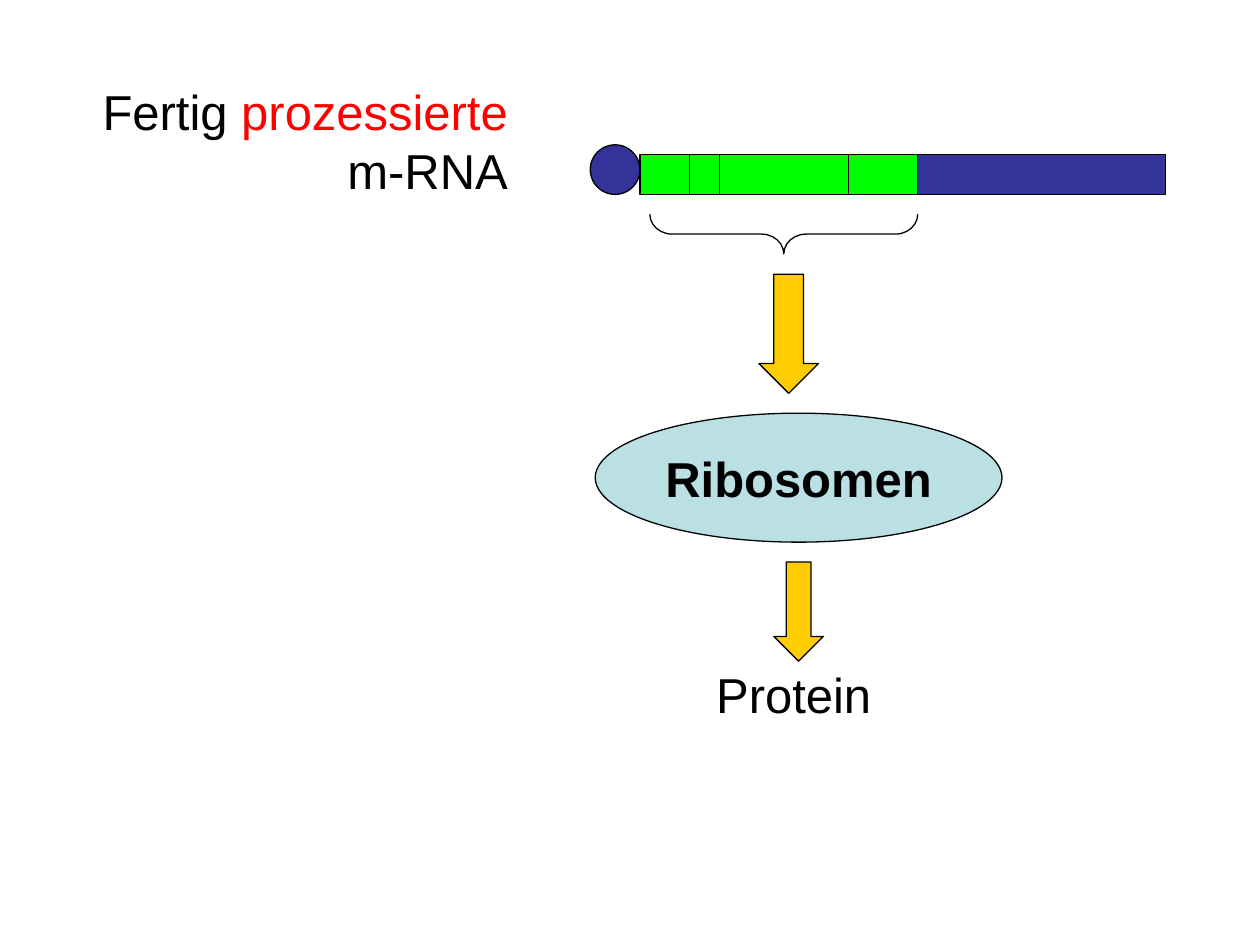
"""Build a slide showing how processed m-RNA becomes protein at the ribosomes."""
from dataclasses import dataclass

from pptx import Presentation
from pptx.dml.color import RGBColor
from pptx.enum.shapes import MSO_SHAPE
from pptx.enum.text import MSO_ANCHOR, MSO_AUTO_SIZE, PP_ALIGN
from pptx.util import Cm, Pt

RECTANGLE, OVAL = MSO_SHAPE.RECTANGLE, MSO_SHAPE.OVAL
BRACE, ARROW = MSO_SHAPE.RIGHT_BRACE, MSO_SHAPE.DOWN_ARROW
TOP, MIDDLE = MSO_ANCHOR.TOP, MSO_ANCHOR.MIDDLE
RIGHT, CENTER = PP_ALIGN.RIGHT, PP_ALIGN.CENTER
FIXED = MSO_AUTO_SIZE.NONE
TITLE_ONLY = 5


@dataclass(frozen=True)
class Theme:
    font: str = "Arial"
    size: int = 28
    outline: float = 0.75
    ink: str = "000000"
    accent: str = "FF0000"
    coding: str = "00FF00"
    noncoding: str = "333399"
    arrow: str = "FFCC00"
    ribosome: str = "BBE0E3"


THEME = Theme()
HEADING = [("Fertig ", THEME.ink), ("prozessierte", THEME.accent), (" m-RNA", THEME.ink)]
RIBOSOME = [("Ribosomen", THEME.ink)]
PRODUCT = [("Protein", THEME.ink)]
SEGMENTS = [
    (1.0, THEME.coding),
    (0.6, THEME.coding),
    (2.6, THEME.coding),
    (1.4, THEME.coding),
    (5.0, THEME.noncoding),
]
STRAND_LEFT, STRAND_TOP, STRAND_HEIGHT, CAP = 12.9, 3.12, 0.8, 1.0
BRACE_LEFT, BRACE_TOP, BRACE_SPAN, BRACE_DEPTH = 13.1, 4.32, 5.4, 0.8
ARROWS = [(15.3, 5.53, 1.2, 2.4), (15.6, 11.33, 1.0, 2.0)]


def write(box, spans, align=CENTER, anchor=TOP, bold=False, wrap=True):
    frame = box.text_frame
    frame.auto_size = FIXED
    frame.word_wrap = wrap
    frame.vertical_anchor = anchor
    para = frame.paragraphs[0]
    para.alignment = align
    for text, color in spans:
        span = para.add_run()
        span.text = text
        span.font.name = THEME.font
        span.font.size = Pt(THEME.size)
        span.font.bold = bold
        span.font.color.rgb = RGBColor.from_string(color)


def draw(page, kind, place, fill=None):
    shape = page.shapes.add_shape(kind, *map(Cm, place))
    shape.shadow.inherit = False
    if fill:
        shape.fill.solid()
        shape.fill.fore_color.rgb = RGBColor.from_string(fill)
    else:
        shape.fill.background()
    shape.line.color.rgb = RGBColor.from_string(THEME.ink)
    shape.line.width = Pt(THEME.outline)
    return shape


def draw_strand(page):
    cap_top = STRAND_TOP + STRAND_HEIGHT - CAP
    draw(page, OVAL, (STRAND_LEFT - CAP, cap_top, CAP, CAP), THEME.noncoding)
    left = STRAND_LEFT
    for width, color in SEGMENTS:
        draw(page, RECTANGLE, (left, STRAND_TOP, width, STRAND_HEIGHT), color)
        left += width


def draw_brace(page):
    shift = (BRACE_SPAN - BRACE_DEPTH) / 2
    place = (BRACE_LEFT + shift, BRACE_TOP - shift, BRACE_DEPTH, BRACE_SPAN)
    brace = draw(page, BRACE, place)
    brace.rotation = 90
    brace.adjustments[0] = 0.56


def main():
    deck = Presentation()
    deck.slide_width, deck.slide_height = Cm(25.4), Cm(19.05)
    page = deck.slides.add_slide(deck.slide_layouts[TITLE_ONLY])

    title = page.shapes.title
    title.left, title.top, title.width, title.height = map(Cm, (0.89, 1.52, 9.6, 2.62))
    write(title, HEADING, align=RIGHT)

    draw_strand(page)
    draw_brace(page)
    for place in ARROWS:
        draw(page, ARROW, place, THEME.arrow)

    ribosome = draw(page, OVAL, (12, 8.33, 8.2, 2.6), THEME.ribosome)
    write(ribosome, RIBOSOME, anchor=MIDDLE, bold=True, wrap=False)

    product = page.shapes.add_textbox(*map(Cm, (10.3, 13.28, 11.4, 1.45)))
    write(product, PRODUCT)
    deck.save("out.pptx")


if __name__ == "__main__":
    main()
